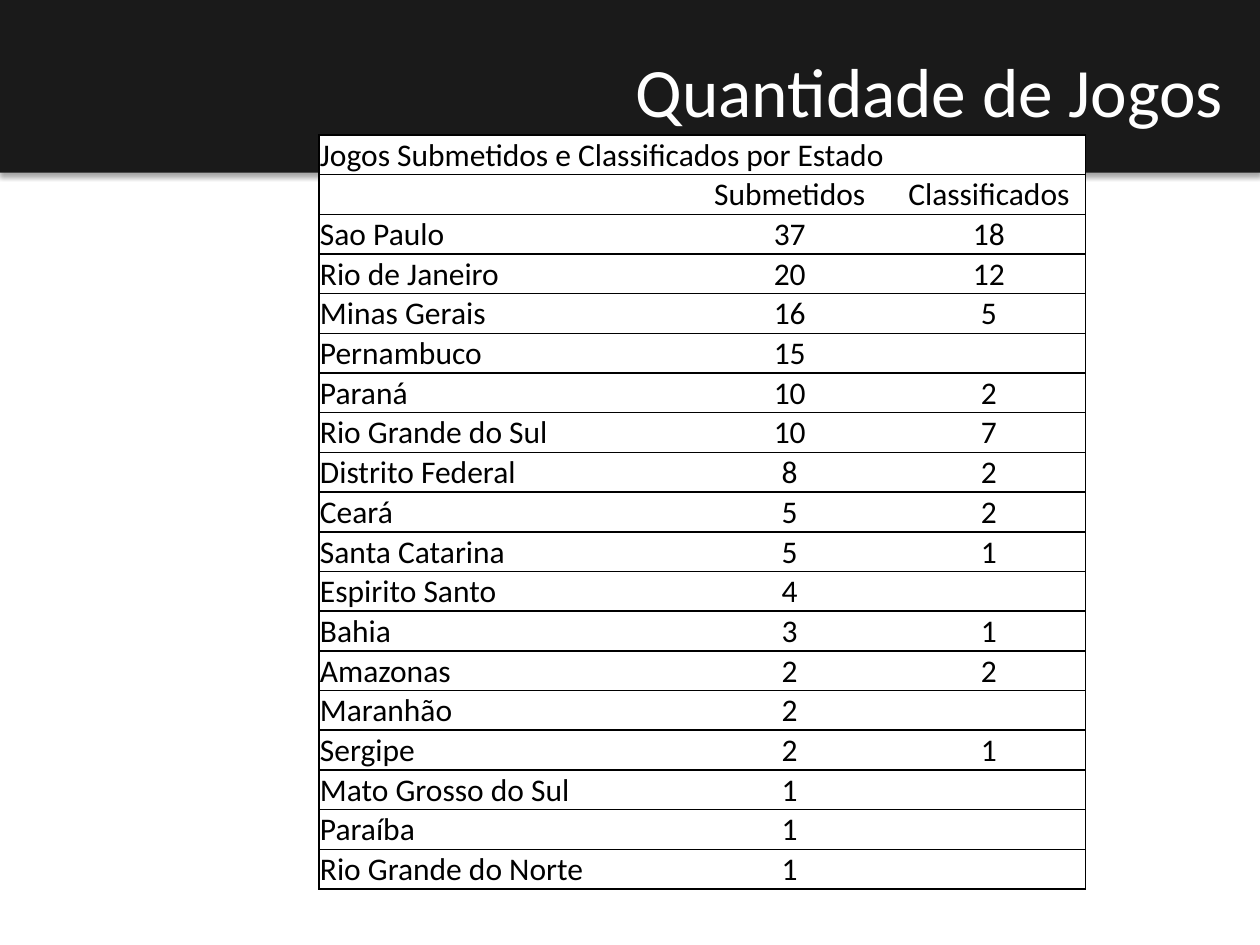
from lxml import etree
from pptx import Presentation
from pptx.dml.color import RGBColor
from pptx.enum.shapes import MSO_SHAPE as Shape
from pptx.enum.text import MSO_ANCHOR as Anchor, PP_ALIGN as Align
from pptx.oxml import parse_xml
from pptx.oxml.ns import nsdecls, qn
from pptx.util import Cm, Pt

FONT = "Calibri"
BLACK, WHITE, DARK = "000000", "FFFFFF", "1A1A1A"
TITLE = "Jogos Submetidos e Classificados por Estado"
ROWS = [
    ("", "Submetidos", "Classificados"),
    ("Sao Paulo", "37", "18"),
    ("Rio de Janeiro", "20", "12"),
    ("Minas Gerais", "16", "5"),
    ("Pernambuco", "15", ""),
    ("Paraná", "10", "2"),
    ("Rio Grande do Sul", "10", "7"),
    ("Distrito Federal", "8", "2"),
    ("Ceará", "5", "2"),
    ("Santa Catarina", "5", "1"),
    ("Espirito Santo", "4", ""),
    ("Bahia", "3", "1"),
    ("Amazonas", "2", "2"),
    ("Maranhão", "2", ""),
    ("Sergipe", "2", "1"),
    ("Mato Grosso do Sul", "1", ""),
    ("Paraíba", "1", ""),
    ("Rio Grande do Norte", "1", ""),
]
WIDTHS = (7.42, 4.14, 3.89)
HIGH = 0.8


def paint(fill, color):
    """Give a fill one solid colour."""
    fill.solid()
    fill.fore_color.rgb = RGBColor.from_string(color)


def style(frame, size, color, align):
    """Format the paragraph and runs of a text frame."""
    para = frame.paragraphs[0]
    para.alignment = align
    for font in [para.font] + [run.font for run in para.runs]:
        font.name, font.size = FONT, Pt(size)
        font.color.rgb = RGBColor.from_string(color)


def add_band(slide, width):
    """Draw the dark header band with its soft shadow."""
    band = slide.shapes.add_shape(Shape.RECTANGLE, 0, 0, width, Cm(3.48))
    paint(band.fill, DARK)
    band.line.fill.background()
    band.shadow.inherit = False
    glow = band._element.spPr.find(qn("a:effectLst"))
    glow.append(parse_xml(
        f'<a:outerShdw {nsdecls("a")} blurRad="{Pt(3.1)}" dist="{Pt(1.8)}" '
        f'dir="5400000" rotWithShape="0"><a:srgbClr val="{BLACK}">'
        '<a:alpha val="35000"/></a:srgbClr></a:outerShdw>'))


def add_title(slide, text):
    """Place the right-aligned slide title."""
    box = slide.shapes.add_textbox(Cm(5.61), Cm(0.86), Cm(19.3), Cm(1.9))
    frame = box.text_frame
    frame.word_wrap = True
    frame.vertical_anchor = Anchor.MIDDLE
    frame.text = text
    style(frame, 39.6, WHITE, Align.RIGHT)


def edge(cell, sides):
    """Rule the named sides of a cell and clear the others."""
    props = cell._tc.get_or_add_tcPr()
    for side in "LRTB":
        line = etree.SubElement(props, qn(f"a:ln{side}"), w=str(Pt(1)))
        if side in sides:
            fill = etree.SubElement(line, qn("a:solidFill"))
            etree.SubElement(fill, qn("a:srgbClr"), val=BLACK)
        else:
            etree.SubElement(line, qn("a:noFill"))


def fill_cell(cell, text, col):
    """Write one cell with its insets, borders and fill."""
    cell.margin_left = cell.margin_right = cell.margin_top = Cm(0.02)
    cell.margin_bottom = 0
    cell.vertical_anchor = Anchor.BOTTOM
    cell.text_frame.text = text
    style(cell.text_frame, 18, BLACK, Align.CENTER if col else Align.LEFT)
    edge(cell, ("LTB", "TB", "RTB")[col])
    paint(cell.fill, WHITE)


def add_grid(slide):
    """Build the table of games by state."""
    data = [(TITLE, "", "")] + ROWS
    frame = slide.shapes.add_table(
        len(data), len(WIDTHS), Cm(6.43), Cm(2.72),
        Cm(sum(WIDTHS)), Cm(HIGH * len(data)))
    table = frame.table
    table.first_row = table.horz_banding = False
    for col, width in zip(table.columns, WIDTHS):
        col.width = Cm(width)
    for row, texts in zip(table.rows, data):
        row.height = Cm(HIGH)
        for col, text in enumerate(texts):
            fill_cell(row.cells[col], text, col)
    head = table.cell(0, 0)
    head.merge(table.cell(0, 2))
    line = head._tc.tcPr.find(qn("a:lnR"))
    line.remove(line[0])
    paint_xml = f'<a:solidFill {nsdecls("a")}><a:srgbClr val="{BLACK}"/></a:solidFill>'
    line.append(parse_xml(paint_xml))


def main():
    """Build and save the slide."""
    deck = Presentation()
    deck.slide_width, deck.slide_height = Cm(25.4), Cm(19.05)
    slide = deck.slides.add_slide(deck.slide_layouts[6])
    add_band(slide, deck.slide_width)
    add_title(slide, "Quantidade de Jogos")
    add_grid(slide)
    deck.save("out.pptx")


if __name__ == "__main__":
    main()
